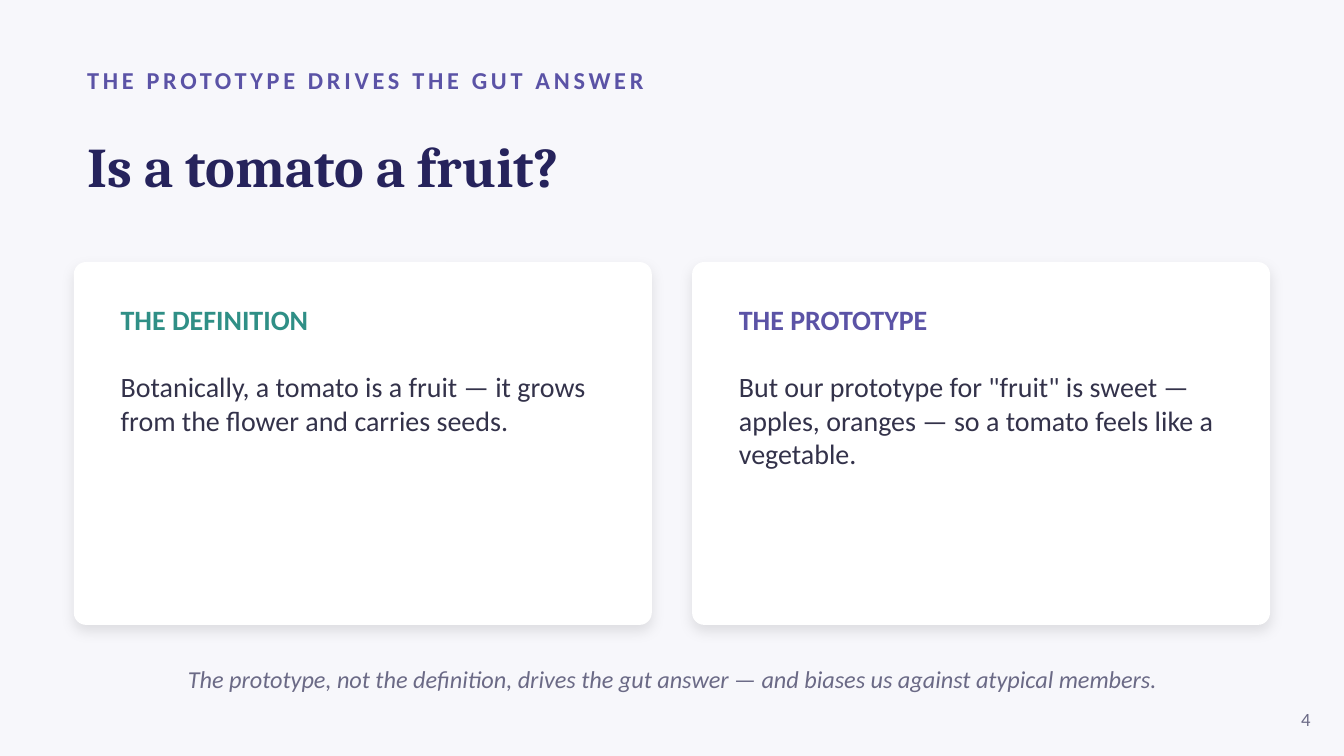
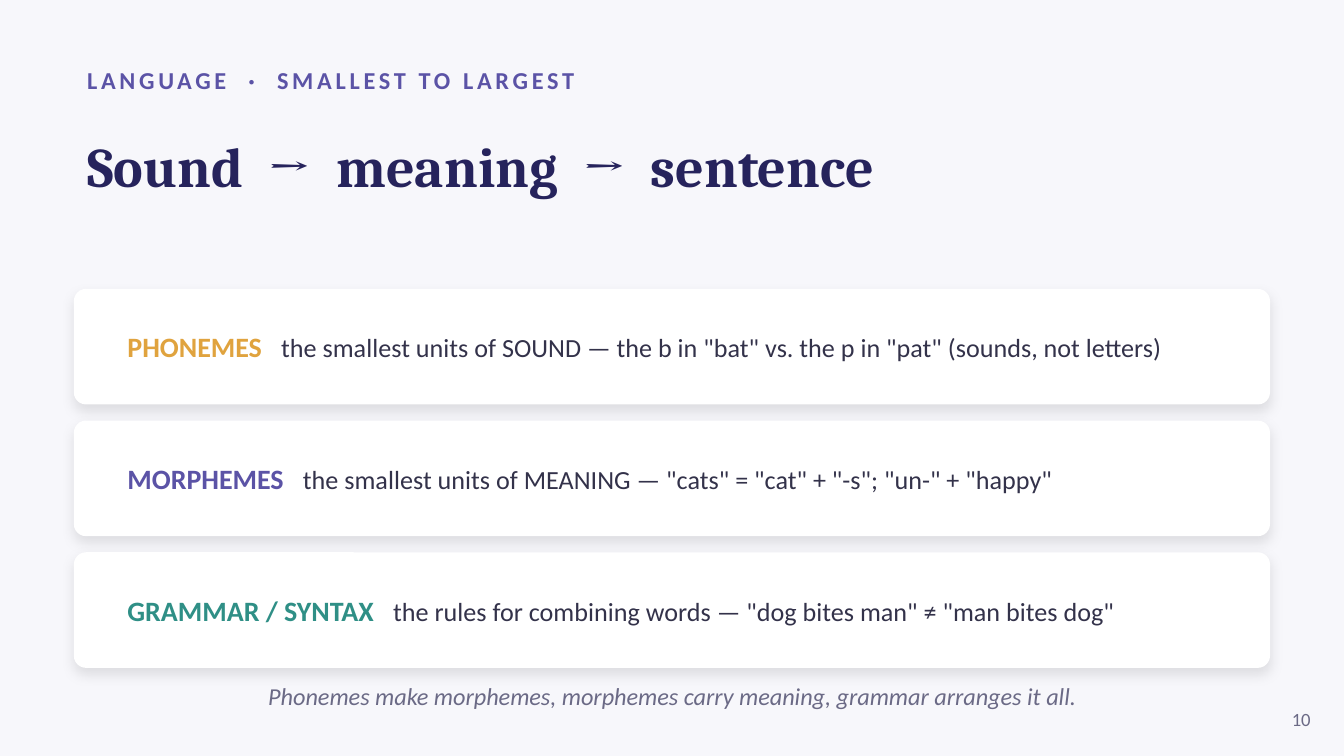
import pptx
import pptx.dml.color
import pptx.enum.shapes
import pptx.enum.text
import pptx.oxml
import pptx.util
from pptx.util import Inches

ALIGN = pptx.enum.text.PP_ALIGN
ANCHOR = pptx.enum.text.MSO_ANCHOR

# Content
TOMATO = {
    "eyebrow": "THE PROTOTYPE DRIVES THE GUT ANSWER",
    "title": "Is a tomato a fruit?",
    "takeaway": "The prototype, not the definition, drives the gut answer — "
                "and biases us against atypical members.",
    "number": "4",
}
VIEWS = [
    ("THE DEFINITION", "teal",
     "Botanically, a tomato is a fruit — it grows from the flower and carries seeds."),
    ("THE PROTOTYPE", "violet",
     'But our prototype for "fruit" is sweet — apples, oranges — '
     "so a tomato feels like a vegetable."),
]

LANGUAGE = {
    "eyebrow": "LANGUAGE  ·  SMALLEST TO LARGEST",
    "title": "Sound  →  meaning  →  sentence",
    "takeaway": "Phonemes make morphemes, morphemes carry meaning, "
                "grammar arranges it all.",
    "number": "10",
}
UNITS = [
    ("PHONEMES", "amber",
     'the smallest units of SOUND — the b in "bat" vs. the p in "pat" (sounds, not letters)'),
    ("MORPHEMES", "violet",
     'the smallest units of MEANING — "cats" = "cat" + "-s"; "un-" + "happy"'),
    ("GRAMMAR / SYNTAX", "teal",
     'the rules for combining words — "dog bites man" ≠ "man bites dog"'),
]

# Shared style
COLORS = {
    "page": "F7F7FB", "card": "FFFFFF", "navy": "26235C", "ink": "33324A",
    "muted": "6B6A86", "violet": "5B53A6", "teal": "2F8F86", "amber": "E0A33E",
}
SLIDE_WIDTH = 10
SLIDE_HEIGHT = SLIDE_WIDTH * 9 / 16
LEFT, WIDTH = 0.55, 8.9
CORNER = 0.09
SHADOW = (
    '<a:effectLst xmlns:a="http://schemas.openxmlformats.org/drawingml/2006/main">'
    '<a:outerShdw blurRad="88900" dist="38100" dir="5400000" algn="ctr" rotWithShape="0">'
    '<a:srgbClr val="000000"><a:alpha val="10000"/></a:srgbClr>'
    '</a:outerShdw></a:effectLst>'
)


def rgb(name):
    return pptx.dml.color.RGBColor.from_string(COLORS[name])


def add_run(paragraph, text, size, color, bold=False, italic=False,
            font="Calibri", spacing=0):
    run = paragraph.add_run()
    run.text = text
    run.font.name = font
    run.font.size = pptx.util.Pt(size)
    run.font.bold = bold
    run.font.italic = italic
    run.font.color.rgb = rgb(color)
    if spacing:
        run.font._element.set("spc", str(round(spacing * 100)))


def add_text_frame(slide, x, y, w, h, anchor=ANCHOR.MIDDLE):
    frame = slide.shapes.add_textbox(
        Inches(x), Inches(y), Inches(w), Inches(h)).text_frame
    frame.word_wrap = True
    frame.vertical_anchor = anchor
    return frame


def add_line(slide, x, y, w, h, text, size, color, align=ALIGN.LEFT, **style):
    paragraph = add_text_frame(slide, x, y, w, h).paragraphs[0]
    paragraph.alignment = align
    add_run(paragraph, text, size, color, **style)


def add_card(slide, x, y, w, h):
    card = slide.shapes.add_shape(
        pptx.enum.shapes.MSO_SHAPE.ROUNDED_RECTANGLE,
        Inches(x), Inches(y), Inches(w), Inches(h))
    card.adjustments[0] = CORNER / min(w, h)
    card.fill.solid()
    card.fill.fore_color.rgb = rgb("card")
    card.line.fill.background()
    card._element.spPr.append(pptx.oxml.parse_xml(SHADOW))


def add_slide(deck, content):
    slide = deck.slides.add_slide(deck.slide_layouts[6])
    slide.background.fill.solid()
    slide.background.fill.fore_color.rgb = rgb("page")
    add_line(slide, LEFT, 0.42, 9, 0.35, content["eyebrow"], 13, "violet",
             bold=True, spacing=2)
    add_line(slide, LEFT, 0.78, WIDTH, 0.9, content["title"], 30, "navy",
             bold=True, font="Cambria")
    return slide


def add_footer(slide, content, y, h):
    add_line(slide, LEFT, y, WIDTH, h, content["takeaway"], 13, "muted",
             ALIGN.CENTER, italic=True)
    add_line(slide, 9.35, 5.2, 0.5, 0.3, content["number"], 10, "muted", ALIGN.RIGHT)


def build_tomato(deck):
    slide = add_slide(deck, TOMATO)
    # Two cards side by side
    top, height, gap, pad = 1.95, 2.7, 0.3, 0.25
    width = (WIDTH - gap * (len(VIEWS) - 1)) / len(VIEWS)
    for i, (heading, color, explanation) in enumerate(VIEWS):
        x = LEFT + i * (width + gap)
        add_card(slide, x, top, width, height)
        frame = add_text_frame(slide, x + pad, top + pad, width - 2 * pad, 2.3, ANCHOR.TOP)
        frame.paragraphs[0].space_after = pptx.util.Pt(18)
        add_run(frame.paragraphs[0], heading, 15, color, bold=True)
        add_run(frame.add_paragraph(), explanation, 15, "ink")
    add_footer(slide, TOMATO, 4.85, 0.4)


def build_language(deck):
    slide = add_slide(deck, LANGUAGE)
    # Stacked cards, one per unit of language
    top, height, gap, pad_x, pad_y = 2.15, 0.86, 0.12, 0.3, 0.13
    for i, (term, color, meaning) in enumerate(UNITS):
        y = top + i * (height + gap)
        add_card(slide, LEFT, y, WIDTH, height)
        frame = add_text_frame(slide, LEFT + pad_x, y + pad_y,
                               WIDTH - 2 * pad_x, height - 2 * pad_y)
        add_run(frame.paragraphs[0], term, 15, color, bold=True)
        # A single widened space separates term and meaning
        add_run(frame.paragraphs[0], " ", 15, color, bold=True, spacing=6.8)
        add_run(frame.paragraphs[0], meaning, 14, "ink")
    add_footer(slide, LANGUAGE, 5, 0.35)


def main():
    deck = pptx.Presentation()
    deck.slide_width, deck.slide_height = Inches(SLIDE_WIDTH), Inches(SLIDE_HEIGHT)
    build_tomato(deck)
    build_language(deck)
    deck.save("out.pptx")


if __name__ == "__main__":
    main()
